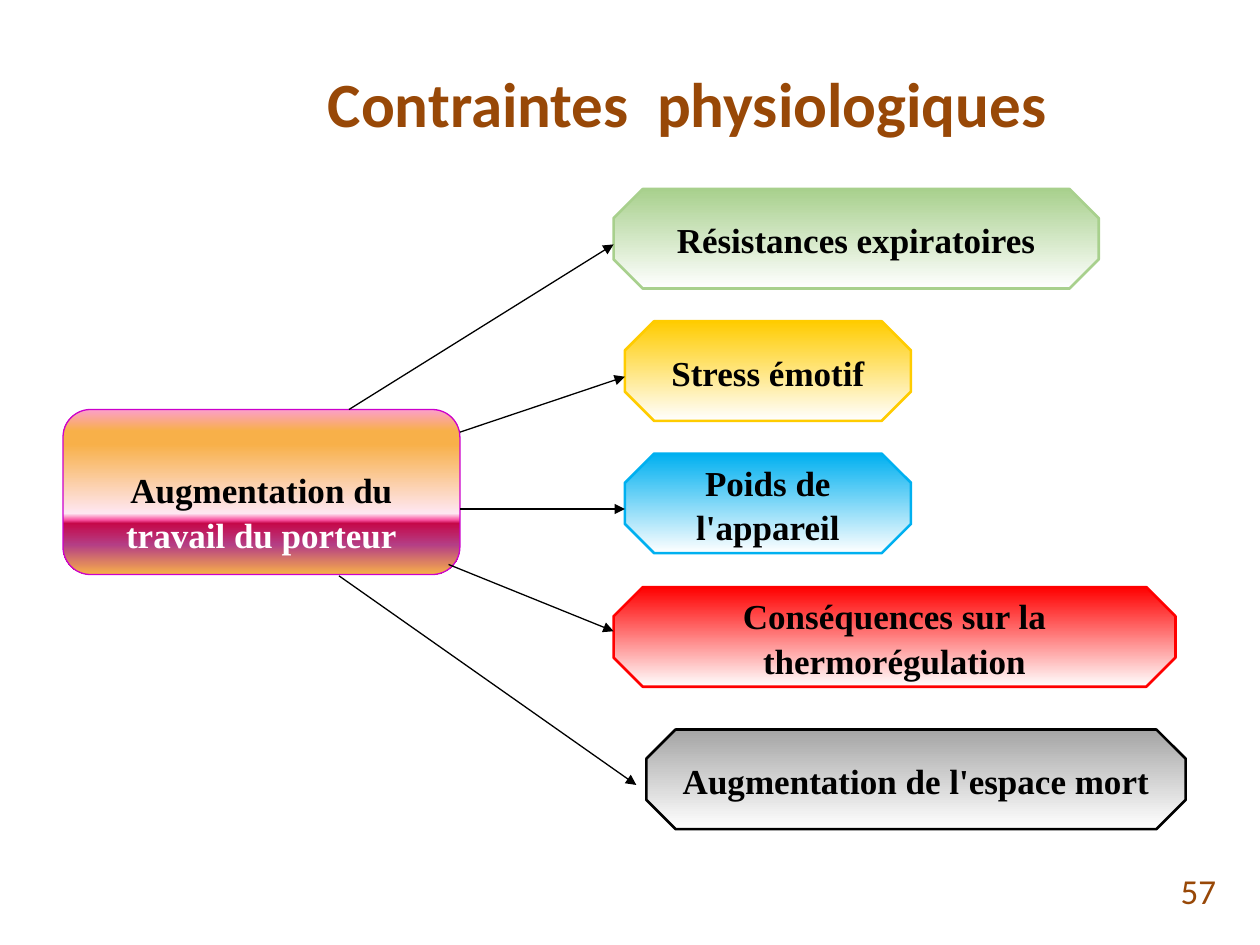
from lxml.etree import SubElement
from pptx import Presentation
from pptx.dml.color import RGBColor
from pptx.enum.shapes import MSO_CONNECTOR as Connector, MSO_SHAPE as Shape
from pptx.enum.text import MSO_ANCHOR as Anchor, PP_ALIGN as Align
from pptx.oxml.ns import qn
from pptx.util import Inches, Pt

COLORS = {
    "brown": "984807", "black": "000000", "white": "FFFFFF",
    "magenta": "CC00CC", "green": "A8D08D", "yellow": "FFCC00",
    "blue": "00B0F0", "red": "FF0000", "gray": "A5A5A5",
    "pink": "FC9FCB", "orange": "F8B049", "blush": "FEE7F2",
    "rose": "F952A0", "crimson": "C50849", "plum": "B43E85",
}
CAUSE_STOPS = [(0, "pink"), (13, "orange"), (21, "orange"), (63, "blush"),
               (67, "rose"), (69, "crimson"), (82, "plum"), (100, "orange")]

# Constraints, top to bottom: text, left, top, width, fill, outline
CONSTRAINTS = [
    ("Résistances expiratoires", 4.87, 1.5, 3.85, "green", "green"),
    ("Stress émotif", 4.96, 2.55, 2.27, "yellow", "yellow"),
    ("Poids de l'appareil", 4.96, 3.6, 2.27, "blue", "blue"),
    ("Conséquences sur la thermorégulation", 4.87, 4.66, 4.46, "red", "red"),
    ("Augmentation de l'espace mort", 5.13, 5.79, 4.28, "gray", "black"),
]
CONSTRAINT_HEIGHT = 0.79

# Arrow ends: from x, from y, to x, to y
ARROWS = [
    (2.77, 3.25, 4.87, 1.94),
    (3.65, 3.43, 4.96, 2.99),
    (3.65, 4.04, 4.96, 4.04),
    (3.56, 4.48, 4.87, 5.01),
    (2.69, 4.57, 5.05, 6.23),
]


def rgb(name):
    return RGBColor.from_string(COLORS[name])


def write(box, spans, font, size, align, bold=True):
    """Fill a box with one paragraph made of (text, color) spans."""
    frame = box.text_frame
    frame.word_wrap = True
    frame.vertical_anchor = Anchor.MIDDLE
    para = frame.paragraphs[0]
    para.alignment = align
    for text, color in spans:
        span = para.add_run()
        span.text = text
        span.font.name = font
        span.font.size = Pt(size)
        span.font.bold = bold
        span.font.color.rgb = rgb(color)
    return para


def add_label(page, place, text, size, align, bold):
    box = page.shapes.add_textbox(*map(Inches, place))
    write(box, [(text, "brown")], "Calibri", size, align, bold)


def set_gradient(shape, stops):
    """Vertical gradient, first stop at the top."""
    shape.fill.gradient()
    shape.fill.gradient_angle = 270
    stop_list = shape.element.spPr.find(".//" + qn("a:gsLst"))
    for stop in list(stop_list):
        stop_list.remove(stop)
    for percent, color in stops:
        stop = SubElement(stop_list, qn("a:gs"), pos=str(percent * 1000))
        SubElement(stop, qn("a:srgbClr"), val=COLORS[color])


def add_block(page, kind, place, corner, stops, outline, weight, spans):
    block = page.shapes.add_shape(kind, *map(Inches, place))
    block.shadow.inherit = False
    block.adjustments[0] = corner
    set_gradient(block, stops)
    block.line.color.rgb = rgb(outline)
    block.line.width = Pt(weight)
    para = write(block, spans, "Times New Roman", 20, Align.CENTER)
    para.line_spacing = 1.05
    para.space_after = Pt(8)
    return block


def add_arrow(page, ends):
    arrow = page.shapes.add_connector(Connector.STRAIGHT, *map(Inches, ends))
    arrow.line.color.rgb = rgb("black")
    arrow.line.width = Pt(0.75)
    SubElement(arrow.line._get_or_add_ln(), qn("a:tailEnd"), type="triangle")
    SubElement(arrow.element.spPr, qn("a:effectLst"))


def main():
    deck = Presentation()
    deck.slide_width, deck.slide_height = Inches(10), Inches(7.5)
    page = deck.slides.add_slide(deck.slide_layouts[6])

    # Page number and title
    add_label(page, (7.42, 6.87, 2.33, 0.4), "57", 20, Align.RIGHT, False)
    add_label(page, (1.22, 0.3, 8.47, 1.03), "Contraintes  physiologiques",
              36, Align.CENTER, True)

    # Cause, with its text set low in the block
    cause = add_block(page, Shape.ROUNDED_RECTANGLE, (0.5, 3.25, 3.15, 1.31),
                      0.167, CAUSE_STOPS, "magenta", 0.75,
                      [("Augmentation du ", "black"),
                       ("travail du porteur", "white")])
    cause.text_frame.margin_top = Inches(0.35)

    # Constraints
    for text, left, top, width, fill, outline in CONSTRAINTS:
        add_block(page, Shape.OCTAGON, (left, top, width, CONSTRAINT_HEIGHT),
                  0.293, [(0, fill), (100, "white")], outline, 1.5,
                  [(text, "black")])

    # Arrows
    for ends in ARROWS:
        add_arrow(page, ends)

    deck.save("out.pptx")


if __name__ == "__main__":
    main()
